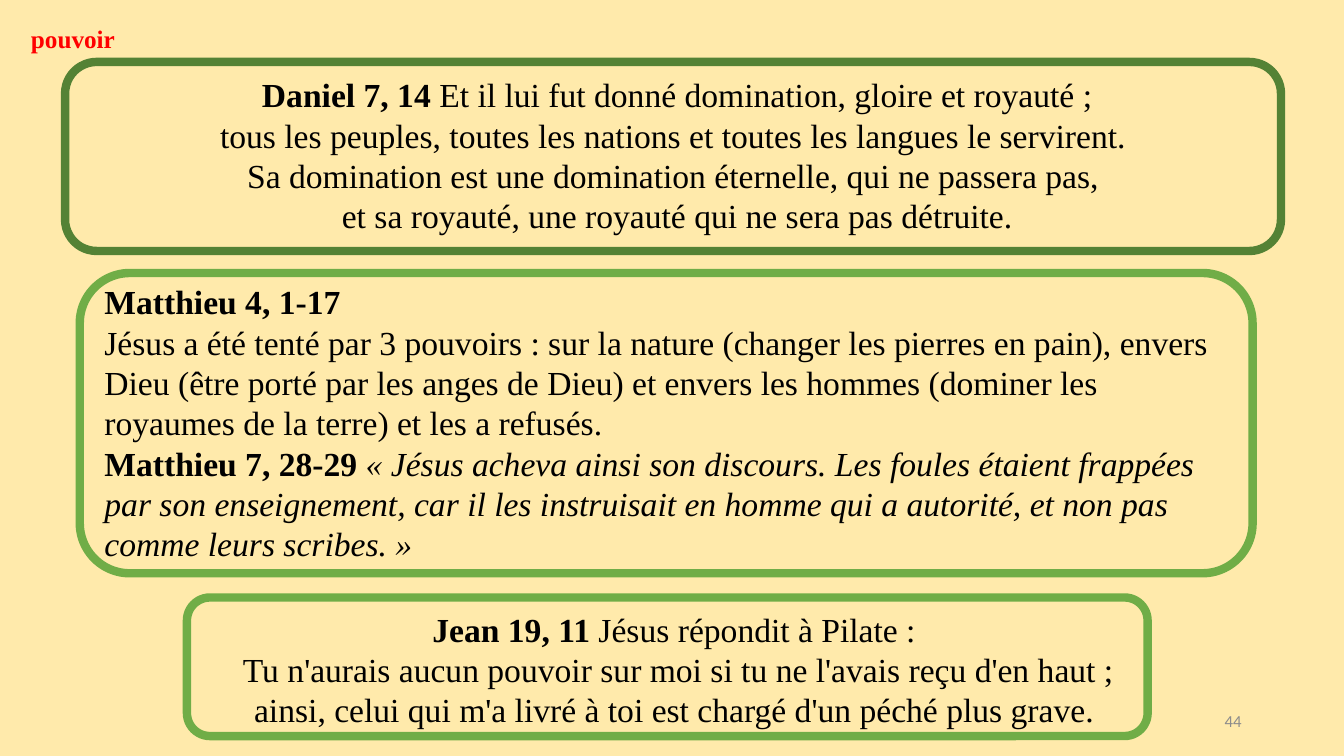
"""Build the slide on power, with three framed Bible passages."""
from dataclasses import dataclass, field
from typing import Any

import pptx
import pptx.dml.color
import pptx.enum.shapes
import pptx.enum.text
import pptx.util

EMU_PER_PX = 9525
LEFT = pptx.enum.text.PP_ALIGN.LEFT
CENTER = pptx.enum.text.PP_ALIGN.CENTER
RIGHT = pptx.enum.text.PP_ALIGN.RIGHT
TOP = pptx.enum.text.MSO_ANCHOR.TOP
MIDDLE = pptx.enum.text.MSO_ANCHOR.MIDDLE

Format = dict[str, Any]
Bounds = tuple[int, int, int, int]
PASSAGE: Format = {"name": "Times New Roman", "size": pptx.util.Pt(24), "color": "000000"}
KEYWORD: Format = {"name": "Times New Roman", "size": pptx.util.Pt(18), "color": "FF0000", "bold": True}
PAGE_NUMBER: Format = {"name": "Calibri", "size": pptx.util.Pt(12), "color": "8C8C8C"}
BOLD: Format = {"bold": True}
ITALIC: Format = {"italic": True}


@dataclass
class Run:
    text: str
    format: Format = field(default_factory=dict)


@dataclass
class TextBlock:
    bounds: Bounds
    paragraphs: list[list[Run]]
    format: Format
    alignment: Any = LEFT
    anchor: Any = TOP


@dataclass
class Passage:
    frame: Bounds
    color: str
    block: TextBlock


PASSAGES = [
    Passage((62, 59, 1158, 180), "548235", TextBlock((98, 66, 1094, 166), [
        [Run("Daniel 7, 14 ", BOLD), Run("Et il lui fut donné domination, gloire et royauté ;")],
        [Run("tous les peuples, toutes les nations et toutes les langues le servirent. ")],
        [Run("Sa domination est une domination éternelle, qui ne passera pas, ")],
        [Run("et sa royauté, une royauté qui ne sera pas détruite.")],
    ], PASSAGE, CENTER)),
    Passage((76, 260, 1117, 286), "70AD47", TextBlock((90, 263, 1075, 281), [
        [Run("Matthieu 4, 1-17", BOLD)],
        [Run("Jésus a été tenté par 3 pouvoirs : sur la nature (changer les pierres en pain), "
             "envers Dieu (être porté par les anges de Dieu) et envers les hommes "
             "(dominer les royaumes de la terre) et les a refusés.")],
        [Run("Matthieu 7, 28-29 ", BOLD),
         Run("« Jésus acheva ainsi son discours. Les foules étaient frappées par son enseignement, "
             "car il les instruisait en homme qui a autorité, et non pas comme leurs scribes. »", ITALIC)],
    ], PASSAGE)),
    Passage((178, 569, 915, 132), "70AD47", TextBlock((221, 575, 850, 131), [
        [Run("Jean 19, 11 ", BOLD), Run("Jésus répondit à Pilate : ")],
        [Run("Tu n'aurais aucun pouvoir sur moi si tu ne l'avais reçu d'en haut ; ")],
        [Run("ainsi, celui qui m'a livré à toi est chargé d'un péché plus grave. ")],
    ], PASSAGE, CENTER)),
]
LABELS = [
    TextBlock((904, 667, 288, 38), [[Run("44")]], PAGE_NUMBER, RIGHT, MIDDLE),
    TextBlock((20, 17, 112, 38), [[Run("pouvoir")]], KEYWORD),
]


def px(length: int) -> int:
    """Turn pixels into EMU."""
    return pptx.util.Emu(length * EMU_PER_PX)


def rgb(color: str) -> pptx.dml.color.RGBColor:
    """Turn a hex string into a colour."""
    return pptx.dml.color.RGBColor.from_string(color)


def apply_format(font: Any, values: Format) -> None:
    """Set font attributes from a dict of format values."""
    for name, value in values.items():
        if name == "color":
            font.color.rgb = rgb(value)
        else:
            setattr(font, name, value)


def draw_text(shapes: Any, block: TextBlock) -> None:
    """Draw a wrapped text box."""
    text_frame = shapes.add_textbox(*map(px, block.bounds)).text_frame
    text_frame.word_wrap = True
    text_frame.vertical_anchor = block.anchor
    for index, runs in enumerate(block.paragraphs):
        paragraph = text_frame.add_paragraph() if index else text_frame.paragraphs[0]
        paragraph.alignment = block.alignment
        for item in runs:
            run = paragraph.add_run()
            run.text = item.text
            apply_format(run.font, block.format | item.format)


def draw_passage(shapes: Any, passage: Passage) -> None:
    """Draw a rounded frame grouped with its text."""
    group = shapes.add_group_shape()
    rounded = pptx.enum.shapes.MSO_SHAPE.ROUNDED_RECTANGLE
    frame = group.shapes.add_shape(rounded, *map(px, passage.frame))
    frame.shadow.inherit = False
    frame.fill.background()
    frame.line.color.rgb = rgb(passage.color)
    frame.line.width = pptx.util.Pt(6)
    draw_text(group.shapes, passage.block)


def main() -> None:
    """Build and save the presentation."""
    presentation = pptx.Presentation()
    presentation.slide_width = px(1280)
    presentation.slide_height = px(720)
    slide = presentation.slides.add_slide(presentation.slide_layouts[6])
    slide.background.fill.solid()
    slide.background.fill.fore_color.rgb = rgb("FFEAAB")
    for label in LABELS:
        draw_text(slide.shapes, label)
    for passage in PASSAGES:
        draw_passage(slide.shapes, passage)
    presentation.save("out.pptx")


if __name__ == "__main__":
    main()
